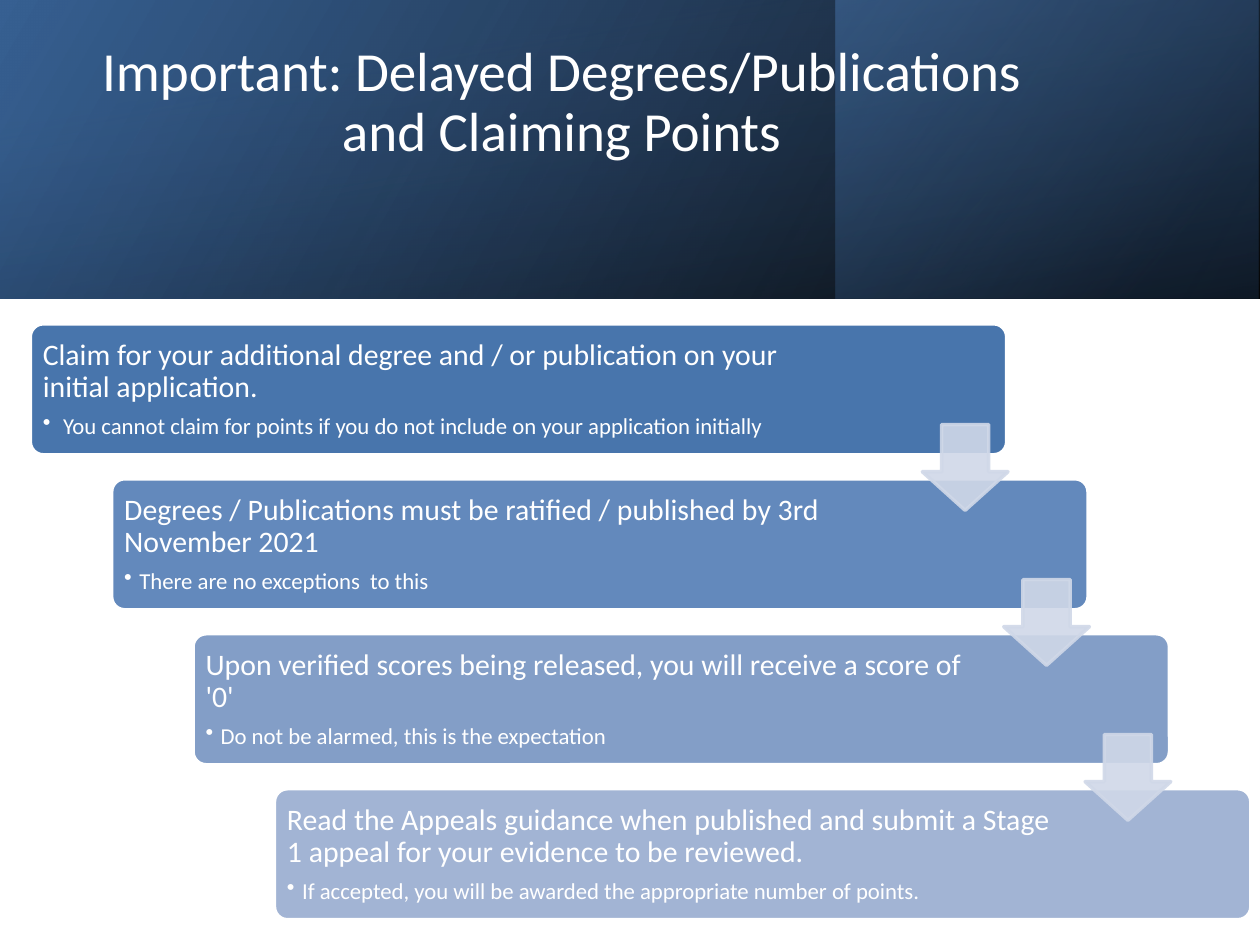
from dataclasses import dataclass

from lxml import etree
from pptx import Presentation
from pptx.dml.color import RGBColor
from pptx.enum.shapes import MSO_SHAPE
from pptx.enum.text import MSO_ANCHOR, PP_ALIGN
from pptx.oxml.ns import qn
from pptx.util import Inches, Pt

RECT = MSO_SHAPE.RECTANGLE
ROUND = MSO_SHAPE.ROUNDED_RECTANGLE
DOWN = MSO_SHAPE.DOWN_ARROW
MIDDLE = MSO_ANCHOR.MIDDLE
CENTER = PP_ALIGN.CENTER
LEFT = PP_ALIGN.LEFT


@dataclass(frozen=True)
class Theme:
    """Colours and type of the slide."""
    font: str = "Calibri"
    white: str = "FFFFFF"
    arrow: str = "D0D8E8"
    blue: str = "376092"
    navy: str = "254061"
    sky: str = "4F81BD"
    black: str = "000000"
    cards: tuple = ("4875AC", "6389BC", "839EC7", "A2B4D4")
    title: float = 31.5
    head: float = 17
    note: float = 13


THEME = Theme()
TITLE = "Important: Delayed Degrees/Publications and Claiming Points"
STEPS = [
    ("Claim for your additional degree and / or publication on your initial application.",
     " You cannot claim for points if you do not include on your application initially", 6.54),
    ("Degrees / Publications must be ratified / published by 3rd November 2021",
     "There are no exceptions  to this", 6.36),
    ("Upon verified scores being released, you will receive a score of '0'",
     "Do not be alarmed, this is the expectation", 6.36),
    ("Read the Appeals guidance when published and submit a Stage 1 appeal for your "
     "evidence to be reviewed. ",
     "If accepted, you will be awarded the appropriate number of points.", 6.36),
]
STEP_X, STEP_Y = 0.646, 1.23


def add_shape(slide, kind, box, fill, line=None):
    """Add a flat shape with a plain fill and an optional outline."""
    shape = slide.shapes.add_shape(kind, *map(Inches, box))
    shape.shadow.inherit = False
    shape.fill.solid()
    shape.fill.fore_color.rgb = RGBColor.from_string(fill)
    if line:
        shape.line.color.rgb = RGBColor.from_string(line)
        shape.line.width = Pt(2)
    else:
        shape.line.fill.background()
    return shape


def set_alpha(color, share):
    """Set the opacity of a colour element in percent."""
    etree.SubElement(color, qn("a:alpha")).set("val", str(share * 1000))


def add_shade(slide, box, stops, angle):
    """Add a rectangle with a see-through gradient."""
    shape = add_shape(slide, RECT, box, THEME.white)
    solid = shape._element.spPr.find(qn("a:solidFill"))
    grad = etree.Element(qn("a:gradFill"), rotWithShape="1")
    items = etree.SubElement(grad, qn("a:gsLst"))
    for pos, rgb, share in stops:
        stop = etree.SubElement(items, qn("a:gs"), pos=str(pos * 1000))
        set_alpha(etree.SubElement(stop, qn("a:srgbClr"), val=rgb), share)
    etree.SubElement(grad, qn("a:lin"), ang=str(angle * 60000), scaled="0")
    solid.getparent().replace(solid, grad)


def add_text(slide, box, rows, align=LEFT, inset=0.07):
    """Add a wrapped box with rows of text, size and space after."""
    frame = slide.shapes.add_textbox(*map(Inches, box)).text_frame
    frame.word_wrap = True
    frame.vertical_anchor = MIDDLE
    frame.margin_left = frame.margin_right = Inches(inset)
    frame.margin_top = frame.margin_bottom = Inches(min(inset, 0.07))
    for i, (text, size, after) in enumerate(rows):
        para = frame.add_paragraph() if i else frame.paragraphs[0]
        para.text = text
        para.alignment = align
        para.line_spacing = 0.9
        para.space_after = Pt(after)
        font = para.runs[0].font
        font.name = THEME.font
        font.size = Pt(size)
        font.color.rgb = RGBColor.from_string(THEME.white)
    return frame


def set_bullet(para):
    """Give a paragraph a round bullet with a hanging indent."""
    props = para._p.get_or_add_pPr()
    props.set("marL", str(Inches(0.12)))
    props.set("indent", str(-Inches(0.12)))
    etree.SubElement(props, qn("a:buChar")).set("char", "•")


def add_step(slide, i, head, note, width):
    """Add one card of the staircase with its text."""
    x, y = 0.24 + i * STEP_X, 2.57 + i * STEP_Y
    card = add_shape(slide, ROUND, (x, y, 7.75, 1.04), THEME.cards[i], THEME.white)
    card.adjustments[0] = 0.1
    rows = [(head, THEME.head, 6), (note, THEME.note, 2)]
    frame = add_text(slide, (x + 0.03, y + 0.03, width, 0.98), rows)
    set_bullet(frame.paragraphs[1])


def add_arrow(slide, i):
    """Add the arrow that leads from one card to the next."""
    box = (7.32 + i * STEP_X, 3.37 + i * STEP_Y, 0.68, 0.68)
    arrow = add_shape(slide, DOWN, box, THEME.arrow, THEME.arrow)
    arrow.adjustments[0] = 0.55
    arrow.adjustments[1] = 0.45
    for color in arrow._element.spPr.iter(qn("a:srgbClr")):
        set_alpha(color, 90)


def add_banner(slide):
    """Add the shaded band and the title."""
    add_shade(slide, (0, 0, 10, 2.37),
              [(0, THEME.blue, 100), (100, THEME.black, 96)], 30)
    add_shade(slide, (6.63, 0, 3.36, 2.37),
              [(0, THEME.sky, 48), (81, THEME.navy, 68)], 40)
    add_shade(slide, (0, 0, 10, 2.37),
              [(23, THEME.blue, 16), (99, THEME.black, 45)], 80)
    add_text(slide, (0.47, 0.16, 7.97, 1.33), [(TITLE, THEME.title, 0)], CENTER, 0.1)


def main():
    """Build and save the slide."""
    deck = Presentation()
    deck.slide_width, deck.slide_height = Inches(10), Inches(7.5)
    slide = deck.slides.add_slide(deck.slide_layouts[6])
    add_banner(slide)
    for i, step in enumerate(STEPS):
        add_step(slide, i, *step)
    for i in range(len(STEPS) - 1):
        add_arrow(slide, i)
    deck.save("out.pptx")


if __name__ == "__main__":
    main()
